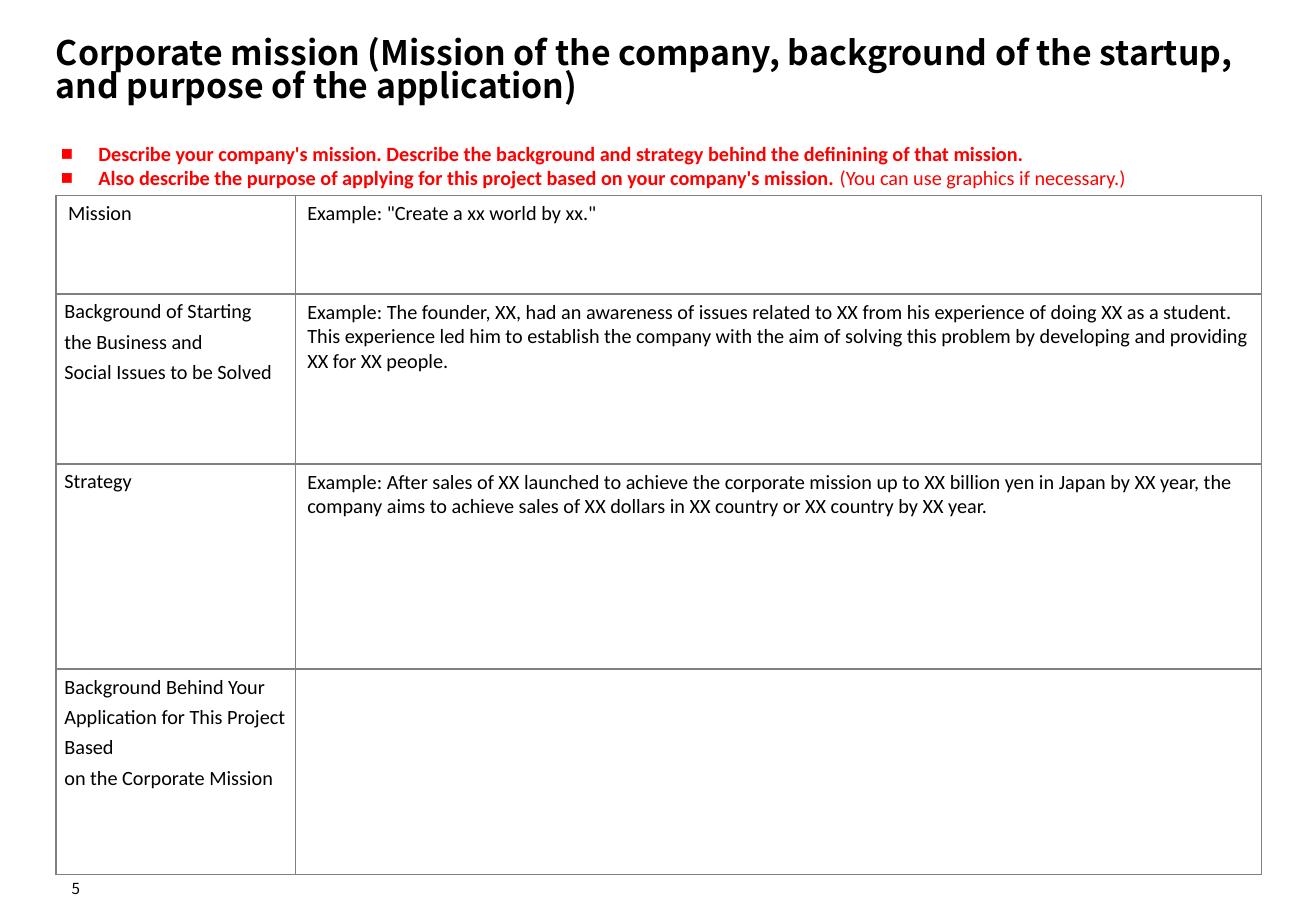
import pptx
import pptx.util
import pptx.oxml
import pptx.oxml.ns
import pptx.dml.color
import pptx.enum.text

Inch, Pt = pptx.util.Inches, pptx.util.Pt
Align, Anchor = pptx.enum.text.PP_ALIGN, pptx.enum.text.MSO_ANCHOR
WIDE, HIGH = 10.83, 7.5
HUES = {"ink": "000000", "alert": "FF0000", "rule": "808080", "paper": "FFFFFF"}
HEAD, BODY = "Noto Sans CJK JP", "Calibri"
COLS = (1.97, 7.95)
ROWS = (0.81, 1.4, 1.69, 1.69)
TITLE = ("Corporate mission (Mission of the company, background of the startup, "
         "and purpose of the application)")
GUIDE = (
    (("Describe your company's mission. Describe the background and strategy "
      "behind the definining of that mission.", True),),
    (("Also describe the purpose of applying for this project based on your "
      "company's mission. ", True),
     ("(You can use graphics if necessary.)", False)),
)
CELLS = (
    (("Mission",), 'Example: "Create a xx world by xx."'),
    (("Background of Starting", "the Business and", "Social Issues to be Solved"),
     "Example: The founder, XX, had an awareness of issues related to XX from his "
     "experience of doing XX as a student. This experience led him to establish the "
     "company with the aim of solving this problem by developing and providing XX "
     "for XX people."),
    (("Strategy",),
     "Example: After sales of XX launched to achieve the corporate mission up to XX "
     "billion yen in Japan by XX year, the company aims to achieve sales of XX "
     "dollars in XX country or XX country by XX year."),
    (("Background Behind Your Application for This Project Based",
      "on the Corporate Mission"), ""),
)


def tint(hue):
    """Return the named colour."""
    return pptx.dml.color.RGBColor.from_string(HUES[hue])


def style(para, size, face, hue="ink", bold=None):
    """Set the font of a paragraph."""
    font = para.font
    font.size, font.name, font.bold = Pt(size), face, bold
    font.color.rgb = tint(hue)


def place(shape, box, pad, anchor, wrap=True):
    """Move a text shape to its box and set its frame."""
    shape.left, shape.top, shape.width, shape.height = map(Inch, box)
    frame = shape.text_frame
    frame.auto_size = pptx.enum.text.MSO_AUTO_SIZE.NONE
    frame.word_wrap, frame.vertical_anchor = wrap, anchor
    frame.margin_left = frame.margin_right = Inch(pad)
    frame.margin_top = frame.margin_bottom = Inch(pad)
    return frame


def title(slide, box):
    """Fill the title placeholder."""
    frame = place(slide.shapes.title, box, 0, Anchor.BOTTOM)
    frame.text = TITLE
    para = frame.paragraphs[0]
    para.alignment, para.line_spacing = Align.LEFT, 0.82
    style(para, 20, HEAD, bold=True)


def guide(slide, box):
    """Fill the body placeholder with the bulleted instructions."""
    frame = place(slide.placeholders[1], box, 0.04, Anchor.MIDDLE)
    for index, runs in enumerate(GUIDE):
        para = frame.add_paragraph() if index else frame.paragraphs[0]
        props = para._p.get_or_add_pPr()
        props.set("marL", str(Inch(0.31)))
        props.set("indent", str(-Inch(0.31)))
        para.space_before = Pt(0)
        mark = pptx.oxml.parse_xml(
            f'<a:buChar {pptx.oxml.ns.nsdecls("a")} char="■"/>')
        props.append(mark)
        style(para, 12, BODY, "alert")
        for text, bold in runs:
            run = para.add_run()
            run.text, run.font.bold = text, bold


def edge(cell):
    """Draw the four borders of a cell and fill it."""
    props = cell._tc.get_or_add_tcPr()
    for side in "LRTB":
        props.append(pptx.oxml.parse_xml(
            f'<a:ln{side} {pptx.oxml.ns.nsdecls("a")} w="{Pt(1)}"><a:solidFill>'
            f'<a:srgbClr val="{HUES["rule"]}"/></a:solidFill></a:ln{side}>'))
    cell.fill.solid()
    cell.fill.fore_color.rgb = tint("paper")


def grid(slide, box):
    """Draw the table of topics and examples."""
    table = slide.shapes.add_table(len(ROWS), len(COLS), *map(Inch, box)).table
    table.first_row = table.horz_banding = False
    for col, width in zip(table.columns, COLS):
        col.width = Inch(width)
    for row, height, (topic, sample) in zip(table.rows, ROWS, CELLS):
        row.height = Inch(height)
        label, entry = row.cells
        label.text, entry.text = "\n".join(topic), sample
        for cell in row.cells:
            edge(cell)
            for para in cell.text_frame.paragraphs:
                style(para, 12, BODY)
        if topic != ("Mission",):
            label.margin_left = label.margin_right = Inch(0.07)
            label.margin_top = label.margin_bottom = 0
            for para in label.text_frame.paragraphs:
                para.line_spacing = Pt(18)


def number(slide, box):
    """Write the page number."""
    shape = slide.shapes.add_textbox(*map(Inch, box))
    frame = place(shape, box, 0, Anchor.BOTTOM, False)
    frame.text = "5"
    para = frame.paragraphs[0]
    para.alignment = Align.RIGHT
    style(para, 9, HEAD)


def main():
    """Build and save the slide."""
    deck = pptx.Presentation()
    deck.slide_width, deck.slide_height = Inch(WIDE), Inch(HIGH)
    slide = deck.slides.add_slide(deck.slide_layouts[1])
    left, span, top = 0.46, sum(COLS), 1.61
    title(slide, (left, 0.2, span, 0.67))
    grid(slide, (left, top, span, sum(ROWS)))
    guide(slide, (left, top - 0.5, span, 0.5))
    number(slide, (left, top + sum(ROWS), 0.2, 0.19))
    deck.save("out.pptx")


if __name__ == "__main__":
    main()
